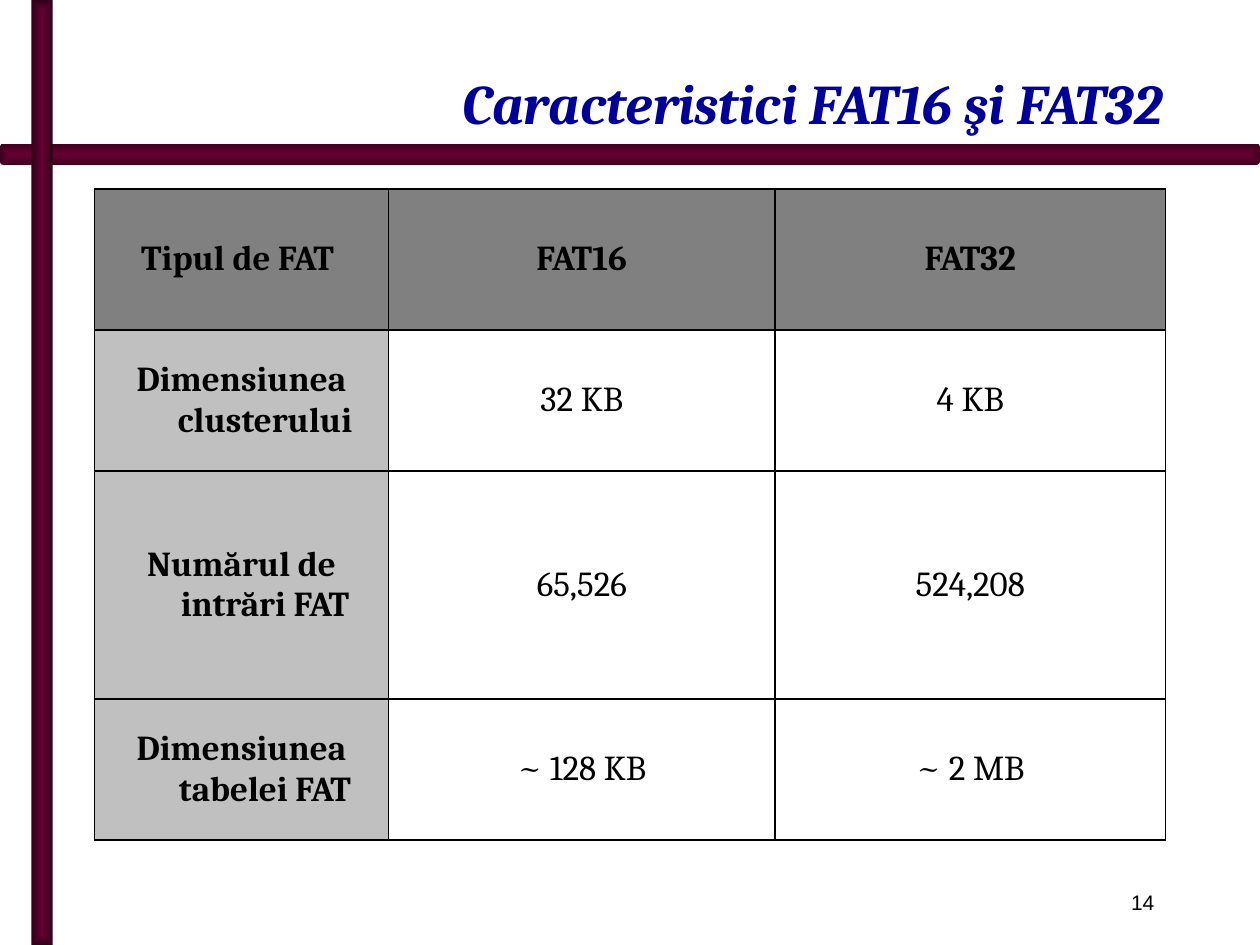
from dataclasses import dataclass
from lxml.etree import SubElement
from pptx import Presentation
from pptx.dml.color import RGBColor
from pptx.enum.shapes import MSO_SHAPE
from pptx.enum.text import MSO_ANCHOR, MSO_AUTO_SIZE, PP_ALIGN
from pptx.oxml import parse_xml
from pptx.oxml.ns import nsdecls, qn
from pptx.util import Pt

TITLE = "Caracteristici FAT16 şi FAT32"
PAGE_NUMBER = "14"
ROWS = [
    ("Tipul de FAT ", "FAT16", "FAT32"),
    ("Dimensiunea clusterului", "32 KB", "4 KB"),
    ("Numărul de intrări FAT", "65,526", "524,208"),
    ("Dimensiunea tabelei FAT", "~ 128 KB", "~ 2 MB"),
]
COLUMN_WIDTHS = (168, 221, 223)
ROW_HEIGHTS = (80.6, 80.6, 130.3, 80.6)
BARS = [
    (MSO_SHAPE.ROUNDED_RECTANGLE, (0, 82.1, 720, 12.2), "410020"),
    (MSO_SHAPE.RECTANGLE, (18, 0, 12.2, 540), "2F0018"),
]


@dataclass(frozen=True)
class Theme:
    heading_font: str = "Cambria"
    number_font: str = "Arial"
    title_size: int = 32
    cell_size: int = 20
    number_size: int = 12
    title: str = "000099"
    text: str = "000000"
    bar: str = "660033"
    header_fill: str = "808080"
    label_fill: str = "C0C0C0"
    border: str = "000000"
    border_width: int = 1
    hanging: int = 27


THEME = Theme()


def write(frame, text, font, size, color, align, bold=False, italic=False):
    frame.text = text
    paragraph = frame.paragraphs[0]
    paragraph.alignment = align
    run_font = paragraph.runs[0].font
    run_font.name, run_font.size = font, Pt(size)
    run_font.bold, run_font.italic = bold, italic
    run_font.color.rgb = RGBColor.from_string(color)
    return paragraph


def add_bar(slide, kind, place, edge_color):
    bar = slide.shapes.add_shape(kind, *map(Pt, place))
    bar.shadow.inherit = False
    bar.line.fill.background()
    bar.fill.gradient()
    for stop, color in zip(bar.fill.gradient_stops, (THEME.bar, edge_color)):
        stop.color.rgb = RGBColor.from_string(color)
    gradient = bar._element.spPr.find(qn("a:gradFill"))
    gradient.replace(gradient.find(qn("a:lin")), parse_xml(
        f'<a:path {nsdecls("a")} path="shape">'
        '<a:fillToRect l="50000" t="50000" r="50000" b="50000"/></a:path>'))


def add_borders(cell):
    properties = cell._tc.get_or_add_tcPr()
    for side in ("lnL", "lnR", "lnT", "lnB"):
        line = SubElement(properties, qn(f"a:{side}"), w=str(Pt(THEME.border_width)))
        solid = SubElement(line, qn("a:solidFill"))
        SubElement(solid, qn("a:srgbClr"), val=THEME.border)


def fill_cell(cell, text, row, column):
    is_label = row == 0 or column == 0
    paragraph = write(cell.text_frame, text, THEME.heading_font, THEME.cell_size,
                      THEME.text, PP_ALIGN.CENTER, bold=is_label)
    indent = paragraph._p.get_or_add_pPr()
    indent.set("marL", str(Pt(THEME.hanging)))
    indent.set("indent", str(-Pt(THEME.hanging)))
    cell.vertical_anchor = MSO_ANCHOR.MIDDLE
    add_borders(cell)
    if is_label:
        cell.fill.solid()
        cell.fill.fore_color.rgb = RGBColor.from_string(
            THEME.header_fill if row == 0 else THEME.label_fill)
    else:
        cell.fill.background()


def add_comparison(slide):
    table = slide.shapes.add_table(
        len(ROWS), len(COLUMN_WIDTHS), Pt(54), Pt(108),
        Pt(sum(COLUMN_WIDTHS)), Pt(sum(ROW_HEIGHTS))).table
    table.first_row = table.horz_banding = False
    for column, width in zip(table.columns, COLUMN_WIDTHS):
        column.width = Pt(width)
    for r, (height, texts) in enumerate(zip(ROW_HEIGHTS, ROWS)):
        table.rows[r].height = Pt(height)
        for c, text in enumerate(texts):
            fill_cell(table.cell(r, c), text, r, c)


def main():
    deck = Presentation()
    deck.slide_width, deck.slide_height = Pt(720), Pt(540)
    slide = deck.slides.add_slide(deck.slide_layouts[5])

    for bar in BARS:
        add_bar(slide, *bar)

    title = slide.shapes.title
    title.left, title.top, title.width, title.height = map(Pt, (60, 12, 612, 69))
    write(title.text_frame, TITLE, THEME.heading_font, THEME.title_size,
          THEME.title, PP_ALIGN.RIGHT, bold=True, italic=True)
    title.text_frame.vertical_anchor = MSO_ANCHOR.BOTTOM
    title.text_frame.auto_size = MSO_AUTO_SIZE.NONE

    add_comparison(slide)

    number = slide.shapes.add_textbox(*map(Pt, (54, 504.7, 612.7, 21.6))).text_frame
    number.word_wrap = True
    write(number, PAGE_NUMBER, THEME.number_font, THEME.number_size,
          THEME.text, PP_ALIGN.RIGHT)

    deck.save("out.pptx")


if __name__ == "__main__":
    main()
